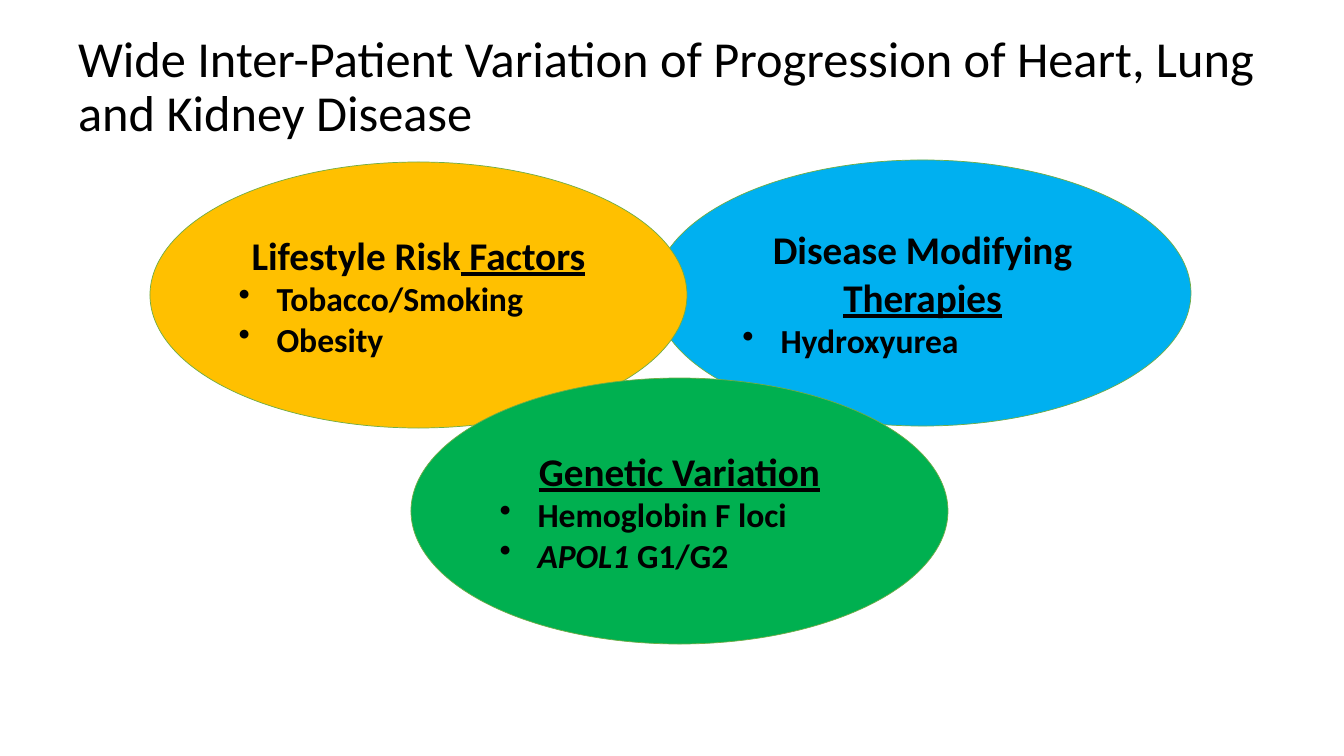
import pptx
import pptx.util
import pptx.dml.color
import pptx.enum.shapes
import pptx.enum.text
import pptx.oxml

SCALE = 12192000 / 1344
COLORS = {
    "text": "000000",
    "outline": "70AD47",
    "therapies": "00B0F0",
    "lifestyle": "FFC000",
    "genetics": "00B050",
}
ELLIPSE_WIDTH, ELLIPSE_HEIGHT = 537, 266
BULLET_INDENT = 38
BULLET_XML = '<a:buChar xmlns:a="http://schemas.openxmlformats.org/drawingml/2006/main" char="•"/>'


def px(length):
    return pptx.util.Emu(round(length * SCALE))


def set_font(paragraph, size, bold):
    paragraph.font.name = "Calibri"
    paragraph.font.size = pptx.util.Pt(size)
    paragraph.font.bold = bold
    paragraph.font.color.rgb = pptx.dml.color.RGBColor.from_string(COLORS["text"])


presentation = pptx.Presentation()
presentation.slide_width = px(1344)
presentation.slide_height = px(756)
slide = presentation.slides.add_slide(presentation.slide_layouts[5])

title = slide.shapes.title
title.left, title.top, title.width, title.height = px(68), px(25), px(1210), px(126)
title.text_frame.text = "Wide Inter-Patient Variation of Progression of Heart, Lung and Kidney Disease"
title.text_frame.word_wrap = True
title.text_frame.auto_size = pptx.enum.text.MSO_AUTO_SIZE.NONE
title.text_frame.vertical_anchor = pptx.enum.text.MSO_ANCHOR.MIDDLE
paragraph = title.text_frame.paragraphs[0]
paragraph.alignment = pptx.enum.text.PP_ALIGN.LEFT
paragraph.line_spacing = 0.9
set_font(paragraph, 36, False)

factors = [
    ("therapies", 654, 160, "Disease Modifying", " Therapies", [("", "Hydroxyurea")]),
    ("lifestyle", 150, 162, "Lifestyle Risk", " Factors", [("", "Tobacco/Smoking"), ("", "Obesity")]),
    ("genetics", 411, 378, "", "Genetic Variation", [("", "Hemoglobin F loci"), ("APOL1 ", "G1/G2")]),
]

for color, left, top, plain, underlined, items in factors:
    ellipse = slide.shapes.add_shape(
        pptx.enum.shapes.MSO_SHAPE.OVAL, px(left), px(top), px(ELLIPSE_WIDTH), px(ELLIPSE_HEIGHT))
    ellipse.shadow.inherit = False
    ellipse.fill.solid()
    ellipse.fill.fore_color.rgb = pptx.dml.color.RGBColor.from_string(COLORS[color])
    ellipse.line.color.rgb = pptx.dml.color.RGBColor.from_string(COLORS["outline"])
    ellipse.line.width = pptx.util.Pt(0.5)
    text_frame = ellipse.text_frame
    text_frame.word_wrap = True
    text_frame.vertical_anchor = pptx.enum.text.MSO_ANCHOR.MIDDLE

    heading = text_frame.paragraphs[0]
    heading.alignment = pptx.enum.text.PP_ALIGN.CENTER
    set_font(heading, 28, True)
    if plain:
        heading.add_run().text = plain
    run = heading.add_run()
    run.text = underlined
    run.font.underline = True

    for italic, regular in items:
        paragraph = text_frame.add_paragraph()
        paragraph.alignment = pptx.enum.text.PP_ALIGN.LEFT
        properties = paragraph._p.get_or_add_pPr()
        properties.set("marL", str(px(BULLET_INDENT)))
        properties.set("indent", str(-px(BULLET_INDENT)))
        properties.append(pptx.oxml.parse_xml(BULLET_XML))
        set_font(paragraph, 24, True)
        if italic:
            run = paragraph.add_run()
            run.text = italic
            run.font.italic = True
        paragraph.add_run().text = regular

presentation.save("out.pptx")
